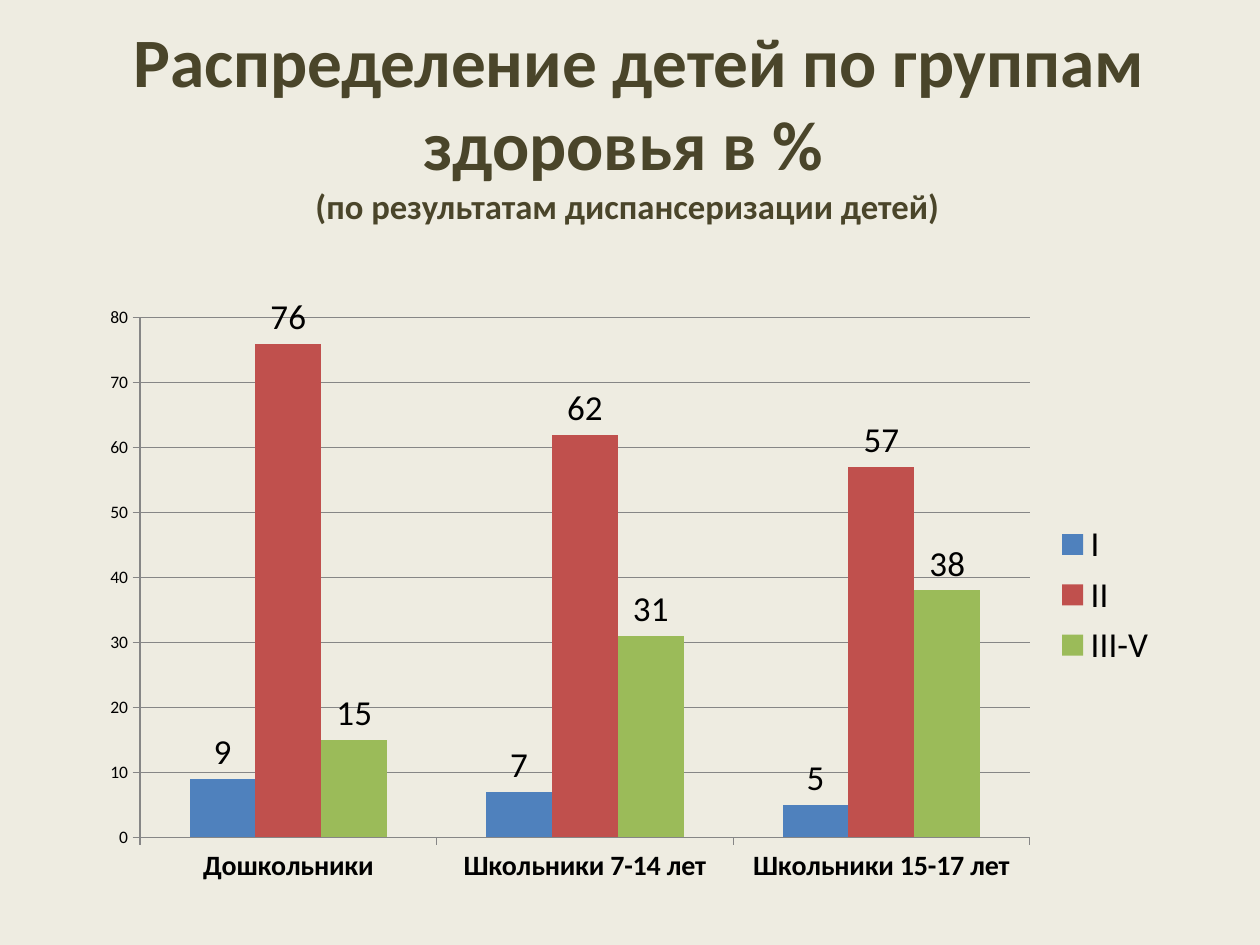
from dataclasses import dataclass

import lxml.etree
import pptx
import pptx.chart.data
import pptx.dml.color
import pptx.enum.chart
import pptx.enum.text
import pptx.oxml
import pptx.oxml.ns
import pptx.util


@dataclass(frozen=True)
class Theme:
    font: str = "Calibri"
    background: str = "EEECE1"
    heading: str = "4A452A"
    ink: str = "000000"
    rule: str = "868686"
    series: tuple = ("4F81BD", "C0504D", "9BBB59")
    heading_size: float = 39.6
    subheading_size: float = 19.8
    label_size: float = 20
    category_size: float = 16
    tick_size: float = 10


def color(value):
    return pptx.dml.color.RGBColor.from_string(value)


def apply(target, **values):
    for name, value in values.items():
        setattr(target, name, value)


class Page:
    """Holds the theme and the current slide, and adds elements to it."""

    def __init__(self, deck, theme):
        self.deck, self.theme = deck, theme
        self.slide = deck.slides.add_slide(deck.slide_layouts[5])
        fill = self.slide.background.fill
        fill.solid()
        fill.fore_color.rgb = color(theme.background)

    def frame(self, left, top, width, height):
        across, down = self.deck.slide_width, self.deck.slide_height
        return dict(left=int(left * across), top=int(top * down),
                    width=int(width * across), height=int(height * down))

    def style(self, font, size, shade, bold=False):
        apply(font, name=self.theme.font, size=pptx.util.Pt(size), bold=bold)
        font.color.rgb = color(shade)

    def title(self, heading, subheading, **place):
        box = self.slide.shapes.title
        apply(box, **self.frame(**place))
        apply(box.text_frame, word_wrap=True,
              auto_size=pptx.enum.text.MSO_AUTO_SIZE.NONE,
              vertical_anchor=pptx.enum.text.MSO_ANCHOR.MIDDLE)
        para = box.text_frame.paragraphs[0]
        para.alignment = pptx.enum.text.PP_ALIGN.CENTER
        lines = ((heading, self.theme.heading_size),
                 (subheading, self.theme.subheading_size))
        for index, (text, size) in enumerate(lines):
            if index:
                para.add_line_break()
            span = para.add_run()
            span.text = text
            self.style(span.font, size, self.theme.heading, bold=True)

    def column_chart(self, categories, series, plot_area, **place):
        theme, kinds = self.theme, pptx.enum.chart
        data = pptx.chart.data.CategoryChartData()
        data.categories = categories
        for name, values in series.items():
            data.add_series(name, values)
        spot = self.frame(**place)
        chart = self.slide.shapes.add_chart(
            kinds.XL_CHART_TYPE.COLUMN_CLUSTERED, spot["left"], spot["top"],
            spot["width"], spot["height"], data).chart
        apply(chart, has_title=False, has_legend=True)
        self.style(chart.font, theme.tick_size, theme.ink)
        apply(chart.legend, position=kinds.XL_LEGEND_POSITION.RIGHT,
              include_in_layout=False)
        self.style(chart.legend.font, theme.label_size, theme.ink)
        plot = chart.plots[0]
        apply(plot, gap_width=150, overlap=0, vary_by_categories=False)
        for bars, shade in zip(plot.series, theme.series):
            bars.format.fill.solid()
            bars.format.fill.fore_color.rgb = color(shade)
            apply(bars.data_labels, show_value=True,
                  position=kinds.XL_LABEL_POSITION.OUTSIDE_END)
            self.style(bars.data_labels.font, theme.label_size, theme.ink)
        apply(chart.value_axis, minimum_scale=0, maximum_scale=80,
              major_unit=10, has_major_gridlines=True)
        axes = ((chart.category_axis, theme.category_size, True),
                (chart.value_axis, theme.tick_size, False))
        for axis, size, bold in axes:
            axis.major_tick_mark = kinds.XL_TICK_MARK.OUTSIDE
            self.style(axis.tick_labels.font, size, theme.ink, bold)
            self.rule(axis.format.line)
        self.rule(chart.value_axis.major_gridlines.format.line)
        self.place_plot(chart, plot_area)

    def rule(self, line):
        line.width = pptx.util.Pt(0.75)
        line.color.rgb = color(self.theme.rule)

    def place_plot(self, chart, shares):
        qn = pptx.oxml.ns.qn
        area = chart.element.find(".//" + qn("c:plotArea"))
        for old in area.findall(qn("c:layout")):
            area.remove(old)
        layout = lxml.etree.Element(qn("c:layout"))
        manual = lxml.etree.SubElement(layout, qn("c:manualLayout"))
        settings = dict(layoutTarget="inner", xMode="edge", yMode="edge",
                        **shares)
        for name, value in settings.items():
            lxml.etree.SubElement(manual, qn("c:" + name), val=str(value))
        area.insert(0, layout)


def main():
    deck = pptx.Presentation()
    apply(deck, slide_width=pptx.util.Inches(10),
          slide_height=pptx.util.Inches(7.5))
    page = Page(deck, Theme())
    page.title(" Распределение детей по группам здоровья в % ",
               "(по результатам диспансеризации детей) ",
               left=0.051, top=0.063, width=0.9, height=0.133)
    page.column_chart(
        ("Дошкольники", "Школьники 7-14 лет", "Школьники 15-17 лет"),
        {"I": (9, 7, 5), "II": (76, 62, 57), "III-V": (15, 31, 38)},
        plot_area=dict(x=0.048, y=0.038, w=0.822, h=0.866),
        left=0.07, top=0.312, width=0.859, height=0.635)
    deck.save("out.pptx")


if __name__ == "__main__":
    main()
